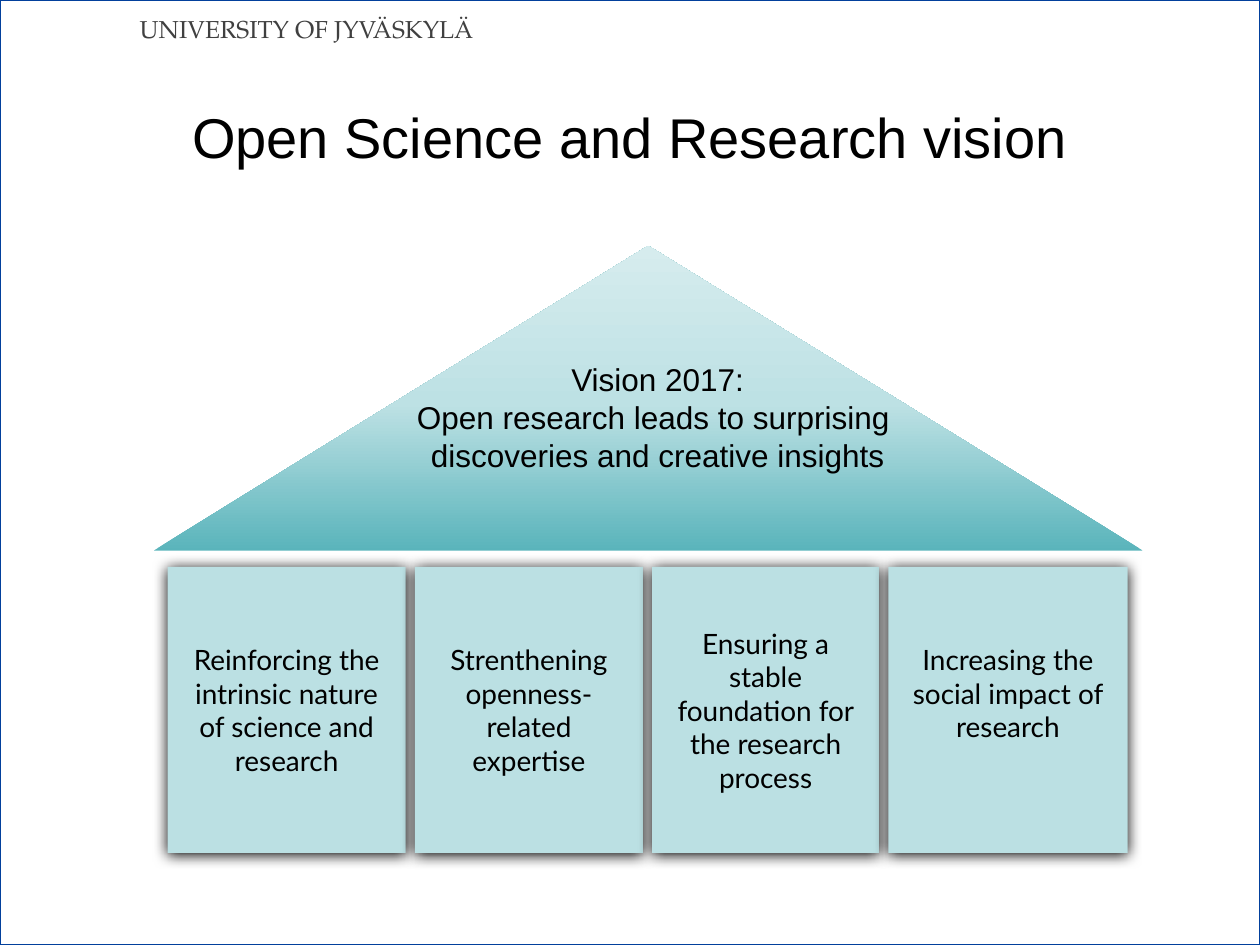
import copy
from dataclasses import dataclass

import pptx
import pptx.dml.color
import pptx.enum.shapes
import pptx.enum.text
import pptx.oxml
import pptx.oxml.ns
import pptx.util

Inches = pptx.util.Inches
Pt = pptx.util.Pt
SHAPE = pptx.enum.shapes.MSO_SHAPE
ANCHOR = pptx.enum.text.MSO_ANCHOR
CENTER = pptx.enum.text.PP_ALIGN.CENTER
qn = pptx.oxml.ns.qn


@dataclass(frozen=True)
class Theme:
    frame: str = "02409C"
    header: str = "404040"
    text: str = "000000"
    pillar: str = "BBE0E3"
    roof: tuple = ((0, "5AB4BB"), (0.48, "BDE1E4"), (1, "D6ECEE"))
    body_font: str = "Arial"
    header_font: str = "TeX Gyre Pagella"
    pillar_font: str = "Lato"
    title_size: int = 32
    vision_size: int = 18
    pillar_size: int = 16
    header_size: int = 14


THEME = Theme()
PILLARS = (
    (1.89, "Reinforcing the intrinsic nature of science and research"),
    (1.81, "Strenthening openness-related expertise"),
    (1.8, "Ensuring a stable foundation for the research process"),
    (1.9, "Increasing the social impact of research"),
)
VISION = (
    ("Vision 2017:",),
    ("Open research leads to surprising ", "discoveries and creative insights"),
)


def rgb(color):
    return pptx.dml.color.RGBColor.from_string(color)


def add_run(paragraph, text, font, size, color=THEME.text):
    run = paragraph.add_run()
    run.text = text
    run.font.name = font
    run.font.size = Pt(size)
    run.font.color.rgb = rgb(color)


def add_plain_shape(slide, kind, box):
    shape = slide.shapes.add_shape(kind, *map(Inches, box))
    shape.shadow.inherit = False
    shape.line.fill.background()
    return shape


def add_soft_shadow(shape):
    shadow = pptx.oxml.parse_xml(
        f'<a:outerShdw {pptx.oxml.ns.nsdecls("a")} blurRad="{Pt(8.5)}" '
        f'dist="{Pt(1)}" dir="5400000" algn="ctr" rotWithShape="0">'
        '<a:srgbClr val="000000"/></a:outerShdw>'
    )
    shape._element.spPr.find(qn("a:effectLst")).append(shadow)


def add_frame(slide, box):
    frame = add_plain_shape(slide, SHAPE.RECTANGLE, box)
    frame.fill.background()
    frame.line.color.rgb = rgb(THEME.frame)
    frame.line.width = Pt(1.25)


def add_header(slide, box):
    header = slide.shapes.add_textbox(*map(Inches, box)).text_frame
    header.word_wrap = True
    add_run(header.paragraphs[0], "UNIVERSITY OF JYVÄSKYLÄ",
            THEME.header_font, THEME.header_size, THEME.header)


def place_title(slide, box):
    title = slide.shapes.title
    title.left, title.top, title.width, title.height = map(Inches, box)
    title.text_frame.vertical_anchor = ANCHOR.TOP
    paragraph = title.text_frame.paragraphs[0]
    paragraph.alignment = CENTER
    add_run(paragraph, "Open Science and Research vision",
            THEME.body_font, THEME.title_size)


def add_roof(slide, box):
    roof = add_plain_shape(slide, SHAPE.ISOSCELES_TRIANGLE, box)
    roof.fill.gradient()
    roof.fill.gradient_angle = 90
    stop_list = roof._element.spPr.find(qn("a:gradFill")).find(qn("a:gsLst"))
    stop_list.append(copy.deepcopy(stop_list[-1]))
    for stop, (position, color) in zip(roof.fill.gradient_stops, THEME.roof):
        stop.position = position
        stop.color.rgb = rgb(color)


def add_vision(slide, box):
    vision = slide.shapes.add_textbox(*map(Inches, box)).text_frame
    vision.word_wrap = False
    for index, lines in enumerate(VISION):
        paragraph = vision.add_paragraph() if index else vision.paragraphs[0]
        paragraph.alignment = CENTER
        for number, line in enumerate(lines):
            if number:
                paragraph.add_line_break()
            add_run(paragraph, line, THEME.body_font, THEME.vision_size)


def add_pillars(slide, box):
    """Spread the pillars over the box with equal gaps."""
    left, top, width, height = box
    gap = (width - sum(size for size, _ in PILLARS)) / (len(PILLARS) - 1)
    for pillar_width, wording in PILLARS:
        pillar = add_plain_shape(slide, SHAPE.RECTANGLE,
                                 (left, top, pillar_width, height))
        pillar.fill.solid()
        pillar.fill.fore_color.rgb = rgb(THEME.pillar)
        add_soft_shadow(pillar)
        frame = pillar.text_frame
        frame.word_wrap = True
        frame.vertical_anchor = ANCHOR.MIDDLE
        frame.paragraphs[0].alignment = CENTER
        add_run(frame.paragraphs[0], wording,
                THEME.pillar_font, THEME.pillar_size)
        left += pillar_width + gap
    # The last pillar's text sits half a line higher than the others.
    frame.margin_bottom = Inches(0.32)


def main():
    deck = pptx.Presentation()
    deck.slide_width, deck.slide_height = Inches(10), Inches(7.5)
    slide = deck.slides.add_slide(deck.slide_layouts[5])
    add_frame(slide, (0, 0, 10, 7.5))
    add_header(slide, (1.01, 0.06, 2.97, 0.35))
    place_title(slide, (0.5, 0.76, 9, 1.25))
    add_roof(slide, (1.22, 1.95, 7.85, 2.42))
    add_pillars(slide, (1.33, 4.5, 7.62, 2.27))
    add_vision(slide, (3.19, 2.81, 4.06, 1.01))
    deck.save("out.pptx")


if __name__ == "__main__":
    main()
